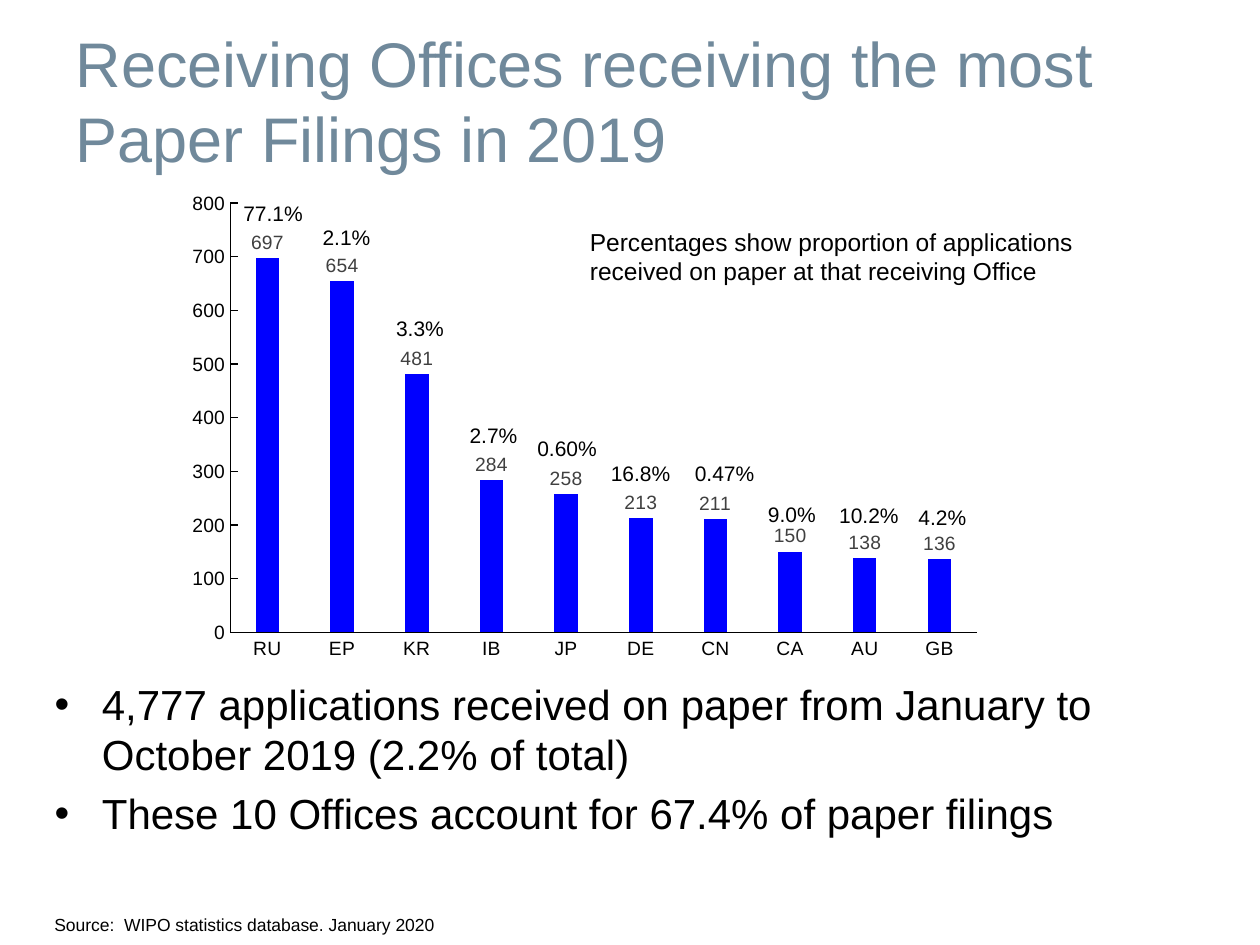
from lxml.etree import SubElement
from pptx import Presentation
from pptx.chart.data import CategoryChartData
from pptx.dml.color import RGBColor
from pptx.enum.chart import XL_CHART_TYPE as ChartType, XL_LABEL_POSITION as LabelPosition
from pptx.enum.chart import XL_TICK_MARK as TickMark
from pptx.enum.text import MSO_ANCHOR as Anchor, MSO_AUTO_SIZE as AutoSize, PP_ALIGN as Align
from pptx.oxml.ns import qn
from pptx.util import Pt

COLORS = {"title": "70899B", "text": "000000", "bar": "0000FF", "value": "404040"}
FONT = "Arial"


def set_font(font, size, color="text"):
    font.name = FONT
    font.size = Pt(size)
    font.bold = False
    font.color.rgb = RGBColor.from_string(COLORS[color])


def add_text(text, left, top, width, height, size, align=Align.LEFT, wrap=True):
    box = slide.shapes.add_textbox(Pt(left), Pt(top), Pt(width), Pt(height))
    box.text_frame.word_wrap = wrap
    paragraph = box.text_frame.paragraphs[0]
    paragraph.text = text
    paragraph.alignment = align
    set_font(paragraph.font, size)


presentation = Presentation()
presentation.slide_width, presentation.slide_height = Pt(720), Pt(540)
slide = presentation.slides.add_slide(presentation.slide_layouts[1])

# Title
title = slide.shapes.title
title.left, title.top, title.width, title.height = Pt(36), Pt(12), Pt(648), Pt(90)
title.text_frame.vertical_anchor = Anchor.MIDDLE
title.text_frame.auto_size = AutoSize.NONE
paragraph = title.text_frame.paragraphs[0]
paragraph.text = "Receiving Offices receiving the most Paper Filings in 2019"
paragraph.alignment = Align.LEFT
set_font(paragraph.font, 36, "title")

# Key findings, with the bullets of the template
body = slide.placeholders[1]
body.left, body.top, body.width, body.height = Pt(24), Pt(384), Pt(618), Pt(46)
body.text_frame.auto_size = AutoSize.NONE
body.text_frame.text = (
    "4,777 applications received on paper from January to October 2019 (2.2% of total)\n"
    "These 10 Offices account for 67.4% of paper filings"
)
for index, paragraph in enumerate(body.text_frame.paragraphs):
    paragraph.space_before = Pt(5 if index else 0)
    set_font(paragraph.font, 24)

# Source line
add_text("Source:  WIPO statistics database. January 2020", 24, 519, 360, 19, 10)

# Column chart of paper filings
offices = ["RU", "EP", "KR", "IB", "JP", "DE", "CN", "CA", "AU", "GB"]
filings = [697, 654, 481, 284, 258, 213, 211, 150, 138, 136]
chart_data = CategoryChartData()
chart_data.categories = offices
chart_data.add_series("Series 1", filings)
chart = slide.shapes.add_chart(
    ChartType.COLUMN_CLUSTERED, Pt(96), Pt(102), Pt(480), Pt(287), chart_data
).chart
chart.has_legend = False
chart.has_title = False
set_font(chart.font, 10)

plot = chart.plots[0]
plot.vary_by_categories = False
plot.gap_width = 219
plot.overlap = -27
bars = plot.series[0]
bars.format.fill.solid()
bars.format.fill.fore_color.rgb = RGBColor.from_string(COLORS["bar"])
labels = bars.data_labels
labels.show_value = True
labels.position = LabelPosition.OUTSIDE_END
set_font(labels.font, 11, "value")

value_axis = chart.value_axis
value_axis.minimum_scale, value_axis.maximum_scale = 0, 800
value_axis.major_unit = 100
value_axis.has_major_gridlines = False
for axis, tick in ((chart.category_axis, TickMark.NONE), (value_axis, TickMark.INSIDE)):
    axis.major_tick_mark = tick
    axis.minor_tick_mark = TickMark.NONE
    axis.format.line.color.rgb = RGBColor.from_string(COLORS["text"])
    axis.format.line.width = Pt(0.75)
    set_font(axis.tick_labels.font, 11)

# Fixed inner plot area
plot_area = plot._element.getparent()
layout = plot_area.find(qn("c:layout"))
if layout is None:
    layout = SubElement(plot_area, qn("c:layout"))
    plot_area.insert(0, layout)
manual = SubElement(layout, qn("c:manualLayout"))
for tag, value in (
    ("layoutTarget", "inner"), ("xMode", "edge"), ("yMode", "edge"),
    ("x", 0.074), ("y", 0.049), ("w", 0.889), ("h", 0.855),
):
    SubElement(manual, qn(f"c:{tag}")).set("val", str(value))

# Share of applications on paper, above each column
shares = [
    ("77.1%", 126, 111), ("2.1%", 168, 125), ("3.3%", 210, 177), ("2.7%", 252, 238),
    ("0.60%", 294, 245.5), ("16.8%", 336, 259.5), ("0.47%", 384, 259.5),
    ("9.0%", 422.5, 283), ("10.2%", 466.5, 283.5), ("4.2%", 508.5, 285),
]
for share, left, top in shares:
    add_text(share, left, top, 60, 22, 12, Align.CENTER)

# Explanation of the percentages
add_text(
    "Percentages show proportion of applications \vreceived on paper at that receiving Office",
    330, 126, 296, 41, 14, wrap=False,
)

presentation.save("out.pptx")
